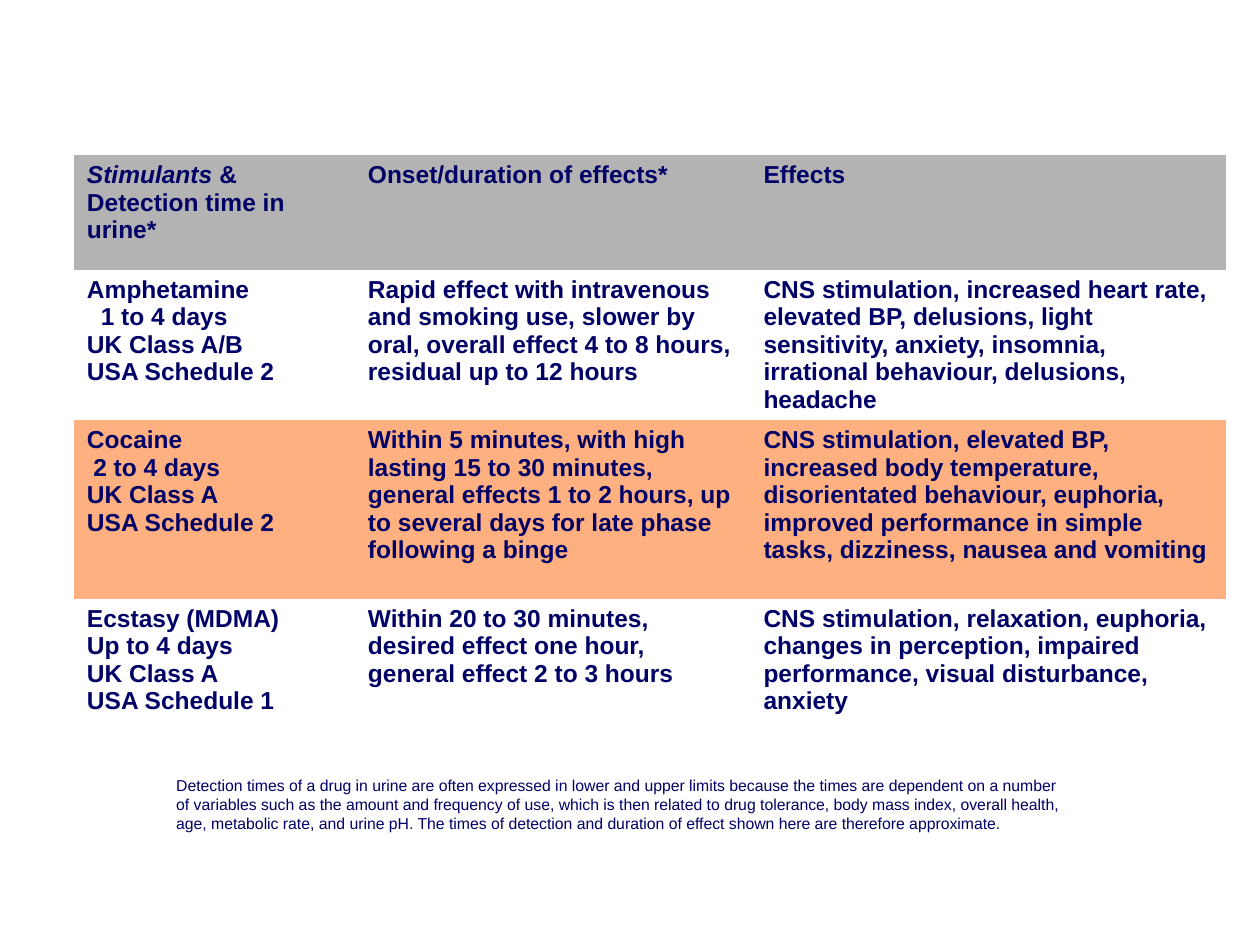
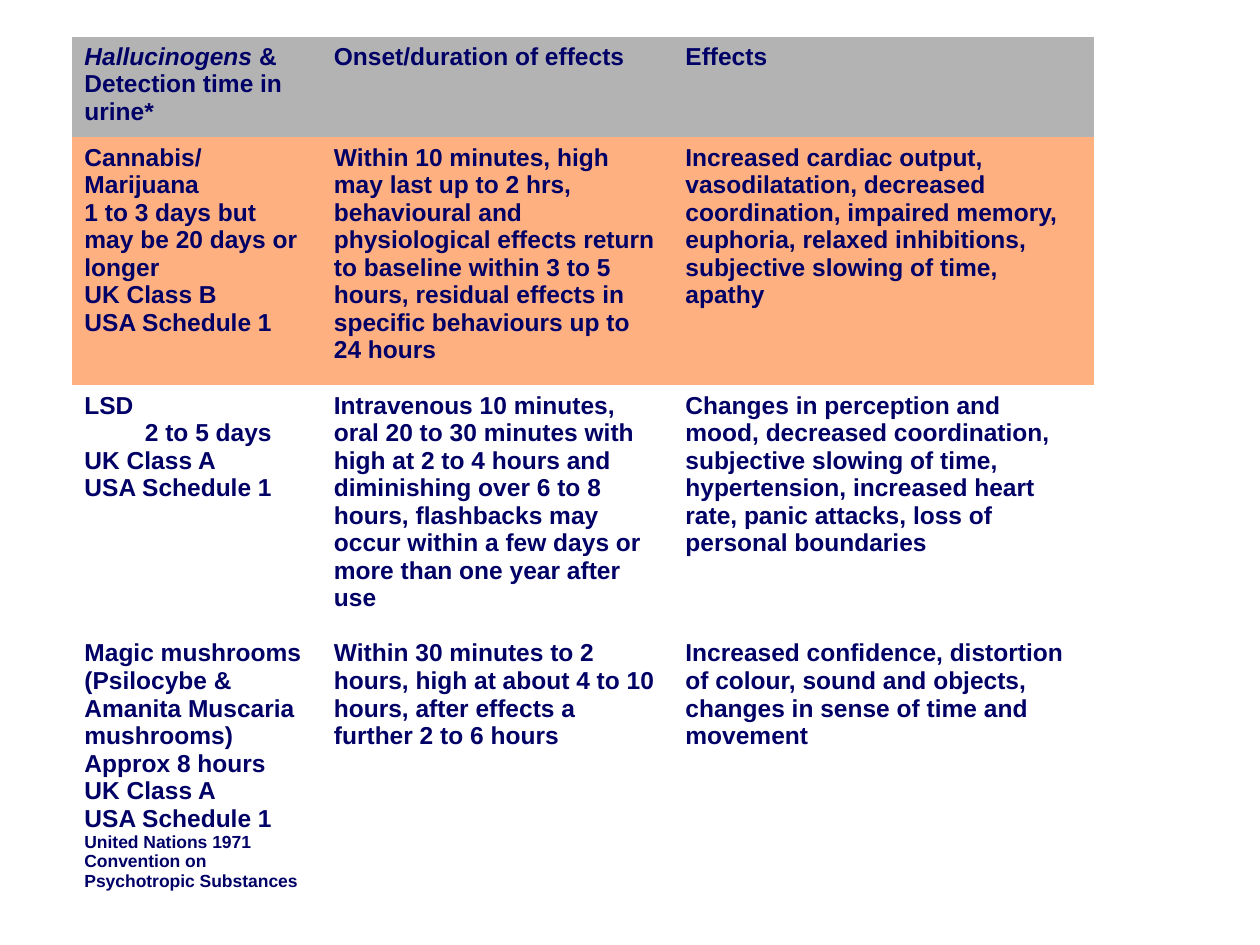
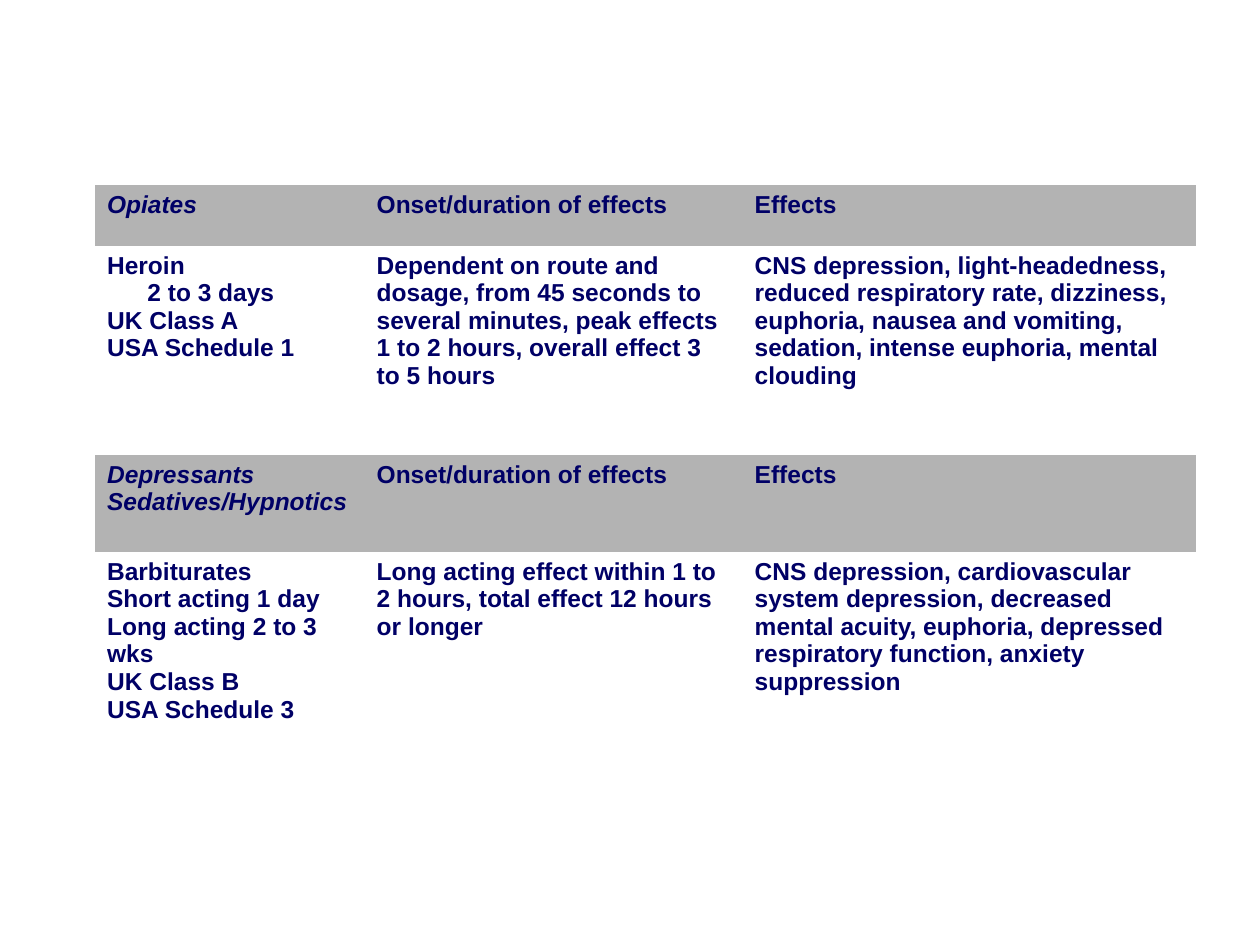
from dataclasses import dataclass

import pptx
import pptx.dml.color
import pptx.enum.text
import pptx.oxml.ns
import pptx.slide
import pptx.text.text
import pptx.util
from pptx.util import Inches

COLOURS = {"text": "000066", "heading": "B3B3B3", "highlight": "FFB080", "plain": "FFFFFF"}
FONT = "Arial"
BODY_SIZE = 14
NOTE_SIZE = 9
UNSTYLED_TABLE = "{2D5ABB26-0587-4C30-8999-92F81FD0307C}"


@dataclass(frozen=True)
class Line:
    text: str
    ending: str = ""
    italic: bool = False
    justified: bool = False
    indent: float = 0
    size: int = BODY_SIZE


@dataclass(frozen=True)
class Row:
    height: float
    cells: tuple[list[Line], list[Line], list[Line]]
    fill: str | None = None


@dataclass(frozen=True)
class DrugTable:
    left: float
    top: float
    columns: tuple[float, float, float]
    rows: list[Row]
    footnote: str = ""


def heading(height: float, group: list[Line], onset: str = "Onset/duration of effects",
            effects_justified: bool = False) -> Row:
    effects = Line("Effects", justified=effects_justified)
    return Row(height, (group, [Line(onset, justified=True)], [effects]), "heading")


def drug(height: float, name: str, detection: list[Line], legal: list[str],
         onset: str, effects: str, fill: str | None = None, source: str = "") -> Row:
    profile = [Line(name), *detection, *map(Line, legal)]
    if source:
        profile.append(Line(source, size=10))
    return Row(height, (profile, [Line(onset)], [Line(effects)]), fill)


DRUG_TABLES = [
    DrugTable(0.59, 1.23, (2.23, 3.14, 3.77), [
        heading(0.91, [Line("Stimulants", ending=" &", italic=True),
                       Line("Detection time in urine*")],
                "Onset/duration of effects*", effects_justified=True),
        drug(1.17, "Amphetamine", [Line("1 to 4 days", indent=0.11)],
             ["UK Class A/B", "USA Schedule 2"],
             "Rapid effect with intravenous and smoking use, slower by oral, "
             "overall effect 4 to 8 hours, residual up to 12 hours",
             "CNS stimulation, increased heart rate, elevated BP, delusions, light "
             "sensitivity, anxiety, insomnia, irrational behaviour, delusions, headache"),
        drug(1.42, "Cocaine", [Line("2 to 4 days", indent=0.05)],
             ["UK Class A", "USA Schedule 2"],
             "Within 5 minutes, with high lasting 15 to 30 minutes, general effects "
             "1 to 2 hours, up to several days for late phase following a binge",
             "CNS stimulation, elevated BP, increased body temperature, disorientated "
             "behaviour, euphoria, improved performance in simple tasks, dizziness, "
             "nausea and vomiting", "highlight"),
        drug(1.17, "Ecstasy (MDMA)", [Line("Up to 4 days")],
             ["UK Class A", "USA Schedule 1"],
             "Within 20 to 30 minutes, desired effect one hour, general effect 2 to 3 hours",
             "CNS stimulation, relaxation, euphoria, changes in perception, impaired "
             "performance, visual disturbance, anxiety"),
    ], "Detection times of a drug in urine are often expressed in lower and upper limits "
       "because the times are dependent on a number of variables such as the amount and "
       "frequency of use, which is then related to drug tolerance, body mass index, overall "
       "health, age, metabolic rate, and urine pH. The times of detection and duration of "
       "effect shown here are therefore approximate."),
    DrugTable(0.57, 0.29, (1.98, 2.79, 3.34), [
        heading(0.79, [Line("Hallucinogens", ending=" &", italic=True, justified=True),
                       Line("Detection time in urine*")]),
        drug(1.7, "Cannabis/Marijuana", [Line("1 to 3 days but may be 20 days or longer")],
             ["UK Class B", "USA Schedule 1"],
             "Within 10 minutes, high may last up to 2 hrs, behavioural and physiological "
             "effects return to baseline within 3 to 5 hours, residual effects in specific "
             "behaviours up to 24 hours",
             "Increased cardiac output, vasodilatation, decreased coordination, impaired "
             "memory, euphoria, relaxed inhibitions, subjective slowing of time, apathy",
             "highlight"),
        drug(1.7, "LSD", [Line("2 to 5 days", indent=0.48)],
             ["UK Class A", "USA Schedule 1"],
             "Intravenous 10 minutes, oral 20 to 30 minutes with high at 2 to 4 hours and "
             "diminishing over 6 to 8 hours, flashbacks may occur within a few days or more "
             "than one year after use",
             "Changes in perception and mood, decreased coordination, subjective slowing of "
             "time, hypertension, increased heart rate, panic attacks, loss of personal "
             "boundaries"),
        drug(2.19, "Magic mushrooms (Psilocybe & Amanita Muscaria mushrooms)",
             [Line("Approx 8 hours")], ["UK Class A", "USA Schedule 1"],
             "Within 30 minutes to 2 hours, high at about 4 to 10 hours, after effects a "
             "further 2 to 6 hours",
             "Increased confidence, distortion of colour, sound and objects, changes in "
             "sense of time and movement", "plain",
             "United Nations 1971 Convention on Psychotropic Substances"),
    ]),
    DrugTable(0.75, 1.47, (2.14, 3, 3.6), [
        heading(0.48, [Line("Opiates", italic=True, justified=True)]),
        drug(1.66, "Heroin", [Line("2 to 3 days", indent=0.32)],
             ["UK Class A", "USA Schedule 1"],
             "Dependent on route and dosage, from 45 seconds to several minutes, peak "
             "effects 1 to 2 hours, overall effect 3 to 5 hours",
             "CNS depression, light-headedness, reduced respiratory rate, dizziness, "
             "euphoria, nausea and vomiting, sedation, intense euphoria, mental clouding"),
        heading(0.77, [Line("Depressants", italic=True, justified=True),
                       Line("Sedatives/Hypnotics", italic=True, justified=True)]),
        drug(1.66, "Barbiturates", [Line("Short acting 1 day"), Line("Long acting 2 to 3 wks")],
             ["UK Class B", "USA Schedule 3"],
             "Long acting effect within 1 to 2 hours, total effect 12 hours or longer",
             "CNS depression, cardiovascular system depression, decreased mental acuity, "
             "euphoria, depressed respiratory function, anxiety suppression"),
    ]),
]


def colour(name: str) -> pptx.dml.color.RGBColor:
    return pptx.dml.color.RGBColor.from_string(COLOURS[name])


def write_lines(frame: pptx.text.text.TextFrame, lines: list[Line], bold: bool) -> None:
    for number, line in enumerate(lines):
        paragraph = frame.add_paragraph() if number else frame.paragraphs[0]
        if line.justified:
            paragraph.alignment = pptx.enum.text.PP_ALIGN.JUSTIFY
        if line.indent:
            paragraph._p.get_or_add_pPr().set("marL", str(Inches(line.indent)))
        paragraph.font.name = FONT
        paragraph.font.size = pptx.util.Pt(line.size)
        paragraph.font.bold = bold
        paragraph.font.color.rgb = colour("text")
        lead = paragraph.add_run()
        lead.text = line.text
        if line.ending:
            lead.font.italic = line.italic
            paragraph.add_run().text = line.ending
        else:
            paragraph.font.italic = line.italic


def draw_drug_table(slide: pptx.slide.Slide, spec: DrugTable) -> None:
    height = sum(row.height for row in spec.rows)
    table = slide.shapes.add_table(
        len(spec.rows), len(spec.columns), Inches(spec.left), Inches(spec.top),
        Inches(sum(spec.columns)), Inches(height)).table
    table.first_row = False
    table.horz_banding = False
    table._tbl.tblPr.find(pptx.oxml.ns.qn("a:tableStyleId")).text = UNSTYLED_TABLE
    for column, width in zip(table.columns, spec.columns):
        column.width = Inches(width)
    for table_row, row in zip(table.rows, spec.rows):
        table_row.height = Inches(row.height)
        for cell, lines in zip(table_row.cells, row.cells):
            if row.fill:
                cell.fill.solid()
                cell.fill.fore_color.rgb = colour(row.fill)
            else:
                cell.fill.background()
            write_lines(cell.text_frame, lines, bold=True)


def draw_footnote(slide: pptx.slide.Slide, text: str) -> None:
    frame = slide.shapes.add_textbox(
        Inches(1.3), Inches(6.11), Inches(7.28), Inches(0.55)).text_frame
    frame.word_wrap = True
    frame.auto_size = pptx.enum.text.MSO_AUTO_SIZE.SHAPE_TO_FIT_TEXT
    write_lines(frame, [Line(text, size=NOTE_SIZE)], bold=False)


def main() -> None:
    presentation = pptx.Presentation()
    presentation.slide_width = Inches(10)
    presentation.slide_height = Inches(7.5)
    for spec in DRUG_TABLES:
        slide = presentation.slides.add_slide(presentation.slide_layouts[6])
        draw_drug_table(slide, spec)
        if spec.footnote:
            draw_footnote(slide, spec.footnote)
    presentation.save("out.pptx")


if __name__ == "__main__":
    main()
